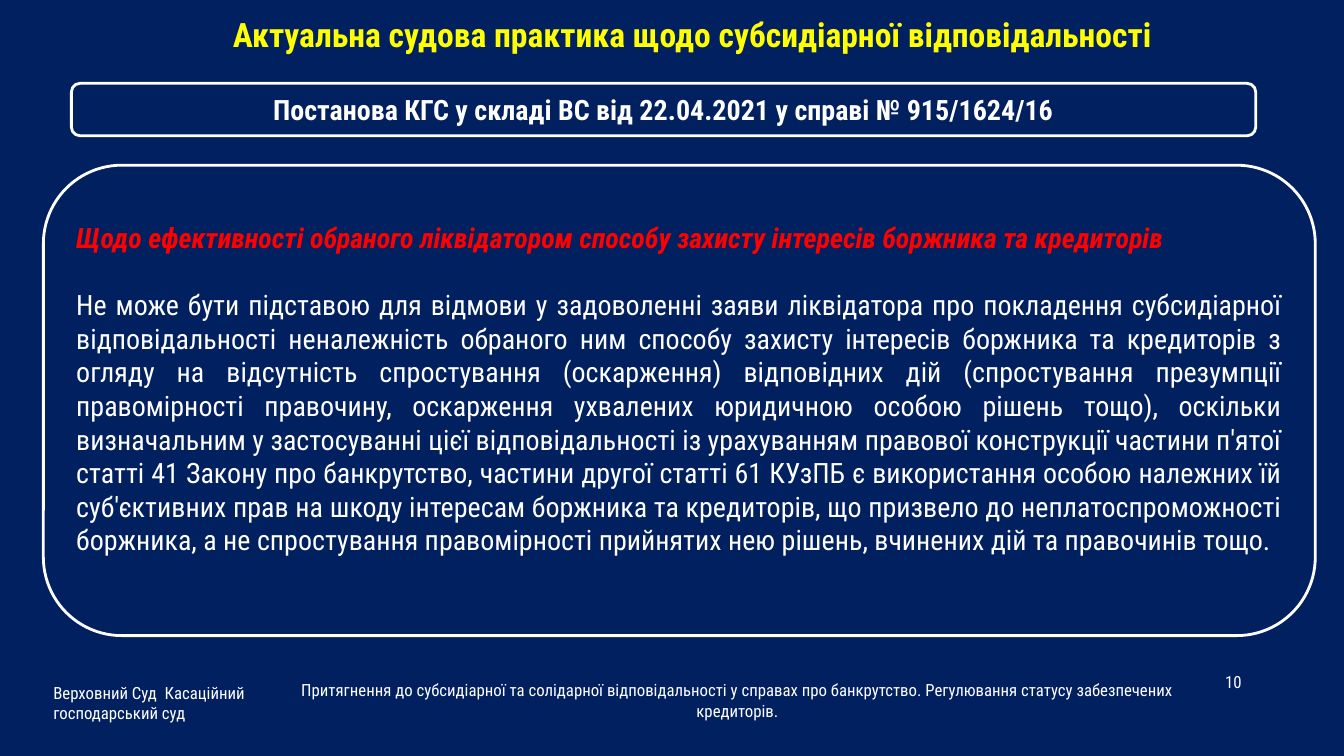
from pptx import Presentation
from pptx.dml.color import RGBColor
from pptx.enum.shapes import MSO_SHAPE
from pptx.enum.text import MSO_ANCHOR, PP_ALIGN
from pptx.util import Pt

ROUNDED = MSO_SHAPE.ROUNDED_RECTANGLE
TOP, MIDDLE = MSO_ANCHOR.TOP, MSO_ANCHOR.MIDDLE
LEFT, CENTER, RIGHT = PP_ALIGN.LEFT, PP_ALIGN.CENTER, PP_ALIGN.RIGHT
JUSTIFY = PP_ALIGN.JUSTIFY

NAVY, WHITE, YELLOW, RED = "002060", "FFFFFF", "FFFF00", "FF0000"


def color(value):
    return RGBColor.from_string(value)


class SlideBuilder:
    font = "Roboto Condensed"
    outline = 2

    def __init__(self, slide):
        self.slide = slide

    def background(self, fill):
        self.slide.background.fill.solid()
        self.slide.background.fill.fore_color.rgb = color(fill)

    def frame(self, shape, anchor):
        frame = shape.text_frame
        frame.word_wrap = True
        frame.vertical_anchor = anchor
        return frame

    def text_box(self, left, top, width, height, anchor=MIDDLE):
        box = self.slide.shapes.add_textbox(Pt(left), Pt(top), Pt(width), Pt(height))
        return self.frame(box, anchor)

    def panel(self, left, top, width, height, anchor=MIDDLE):
        panel = self.slide.shapes.add_shape(
            ROUNDED, Pt(left), Pt(top), Pt(width), Pt(height))
        panel.shadow.inherit = False
        panel.fill.solid()
        panel.fill.fore_color.rgb = color(NAVY)
        panel.line.color.rgb = color(WHITE)
        panel.line.width = Pt(self.outline)
        return self.frame(panel, anchor)

    def paragraph(self, frame, text, size, align, ink=WHITE,
                  bold=False, italic=False, after=0):
        first = frame.paragraphs[0]
        paragraph = frame.add_paragraph() if first.runs else first
        paragraph.alignment = align
        paragraph.space_after = Pt(after)
        run = paragraph.add_run()
        run.text = text
        run.font.name = self.font
        run.font.size = Pt(size)
        run.font.bold = bold
        run.font.italic = italic
        run.font.color.rgb = color(ink)


def main():
    deck = Presentation()
    deck.slide_width, deck.slide_height = Pt(960), Pt(540)
    page = SlideBuilder(deck.slides.add_slide(deck.slide_layouts[6]))
    page.background(NAVY)

    footers = [
        ((678, 475, 216, 24), RIGHT, "10"),
        ((31, 475, 183, 54), LEFT, "Верховний Суд  Касаційний господарський суд"),
        ((183, 485.5, 687.5, 29.5), CENTER,
         "Притягнення до субсидіарної та солідарної відповідальності у справах "
         "про банкрутство. Регулювання статусу забезпечених кредиторів."),
    ]
    for area, align, text in footers:
        page.paragraph(page.text_box(*area), text, 12, align)

    title = page.text_box(51, 6.5, 909, 36, TOP)
    title.margin_right = Pt(29)
    page.paragraph(title, "Актуальна судова практика щодо субсидіарної відповідальності",
                   24, CENTER, YELLOW, bold=True)

    ruling = page.panel(51, 59.5, 846, 37.5)
    page.paragraph(ruling, "Постанова КГС у складі ВС від 22.04.2021 у справі № 915/1624/16",
                   20, CENTER, bold=True)

    position = page.panel(31, 118, 908.5, 336, TOP)
    position.margin_top = Pt(23)
    page.paragraph(
        position,
        "Щодо ефективності обраного ліквідатором способу захисту інтересів "
        "боржника та кредиторів",
        20, JUSTIFY, RED, bold=True, italic=True, after=24)
    page.paragraph(
        position,
        "Не може бути підставою для відмови у задоволенні заяви ліквідатора про "
        "покладення субсидіарної відповідальності неналежність обраного ним способу "
        "захисту інтересів боржника та кредиторів з огляду на відсутність спростування "
        "(оскарження) відповідних дій (спростування презумпції правомірності правочину, "
        "оскарження ухвалених юридичною особою рішень тощо), оскільки визначальним у "
        "застосуванні цієї відповідальності із урахуванням правової конструкції частини "
        "п'ятої статті 41 Закону про банкрутство, частини другої статті 61 КУзПБ є "
        "використання особою належних їй суб'єктивних прав на шкоду інтересам боржника "
        "та кредиторів, що призвело до неплатоспроможності боржника, а не спростування "
        "правомірності прийнятих нею рішень, вчинених дій та правочинів тощо.",
        20, JUSTIFY)

    deck.save("out.pptx")


if __name__ == "__main__":
    main()
